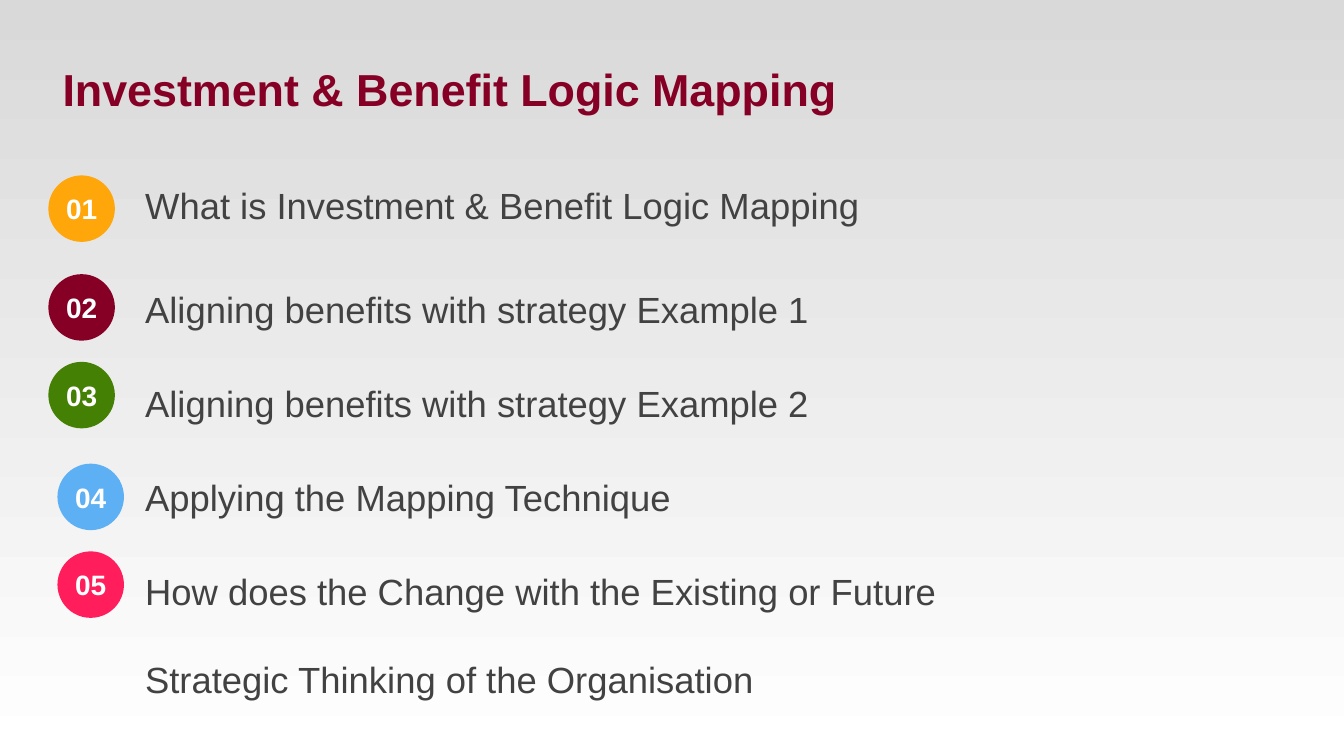
"""Build the Investment & Benefit Logic Mapping agenda slide."""
from pptx import Presentation
from pptx.dml.color import RGBColor as Rgb
from pptx.enum.shapes import MSO_SHAPE as Geo
from pptx.enum.text import MSO_ANCHOR as Anchor, MSO_AUTO_SIZE as Auto, PP_ALIGN as Align
from pptx.oxml.ns import qn
from pptx.util import Inches, Pt

TITLE = "Investment & Benefit Logic Mapping"
ITEMS = [
    "What is Investment & Benefit Logic Mapping",
    "Aligning benefits with strategy Example 1",
    "Aligning benefits with strategy Example 2",
    "Applying the Mapping Technique",
    "How does the Change with the Existing or Future Strategic Thinking of the Organisation",
]
GAPS = [0, 43, 4.4, 4.4, 4.4]
BADGES = [
    ("01", 0.48, 1.74, "amber"),
    ("02", 0.48, 2.72, "wine"),
    ("03", 0.48, 3.59, "green"),
    ("04", 0.57, 4.6, "blue"),
    ("05", 0.57, 5.47, "pink"),
]
COLORS = {
    "wine": "860025", "text": "424242", "white": "FFFFFF", "grey": "D9D9D9",
    "amber": "FEA60A", "green": "448003", "blue": "5DB0F4", "pink": "FF1D5C",
}
FONT = "Arial"
SIZE = 0.66
LEADING = Pt(62.8)


def color(name):
    return Rgb.from_string(COLORS[name])


def place(shape, left, top, width, height):
    shape.left, shape.top = Inches(left), Inches(top)
    shape.width, shape.height = Inches(width), Inches(height)


def setup(frame, anchor, left, top, right, bottom):
    frame.auto_size = Auto.NONE
    frame.vertical_anchor = anchor
    frame.margin_left, frame.margin_top = Inches(left), Inches(top)
    frame.margin_right, frame.margin_bottom = Inches(right), Inches(bottom)


def write(para, text, size, tint, bold=False, align=Align.LEFT):
    para.alignment = align
    run = para.add_run()
    run.text = text
    font = run.font
    font.name, font.size, font.bold = FONT, Pt(size), bold
    font.color.rgb = color(tint)


def paint(slide):
    fill = slide.background.fill
    fill.gradient()
    fill.gradient_angle = 90
    for stop, spot, name in zip(fill.gradient_stops, (0, 1), ("white", "grey")):
        stop.position = spot
        stop.color.rgb = color(name)


def add_title(slide):
    title = slide.shapes.title
    place(title, 0.37, 0.18, 12.59, 1.03)
    frame = title.text_frame
    setup(frame, Anchor.BOTTOM, 0.25, 0.07, 0.13, 0.07)
    para = frame.paragraphs[0]
    para.line_spacing = 0.8
    write(para, TITLE, 32, "wine", True)


def add_list(slide):
    body = slide.placeholders[1]
    place(body, 1.31, 1.75, 9.53, 5.75)
    frame = body.text_frame
    setup(frame, Anchor.TOP, 0.13, 0.07, 0.13, 0.07)
    for row, (item, gap) in enumerate(zip(ITEMS, GAPS)):
        para = frame.add_paragraph() if row else frame.paragraphs[0]
        props = para._p.get_or_add_pPr()
        props.set("marL", "0")
        props.set("indent", "0")
        props.append(props.makeelement(qn("a:buNone"), {}))
        para.space_before = Pt(gap)
        para.line_spacing = LEADING if row > 1 else 1.0
        write(para, item, 26, "text")


def add_badge(slide, label, left, top, tint):
    badge = slide.shapes.add_shape(
        Geo.OVAL, Inches(left), Inches(top), Inches(SIZE), Inches(SIZE))
    badge.shadow.inherit = False
    badge.fill.solid()
    badge.fill.fore_color.rgb = color(tint)
    badge.line.fill.background()
    frame = badge.text_frame
    setup(frame, Anchor.MIDDLE, 0, 0, 0, 0)
    frame.word_wrap = False
    write(frame.paragraphs[0], label, 20, "white", True, Align.CENTER)


def main():
    deck = Presentation()
    deck.slide_width, deck.slide_height = Inches(13.33), Inches(7.5)
    slide = deck.slides.add_slide(deck.slide_layouts[1])
    paint(slide)
    add_title(slide)
    add_list(slide)
    for badge in BADGES:
        add_badge(slide, *badge)
    deck.save("out.pptx")


if __name__ == "__main__":
    main()
